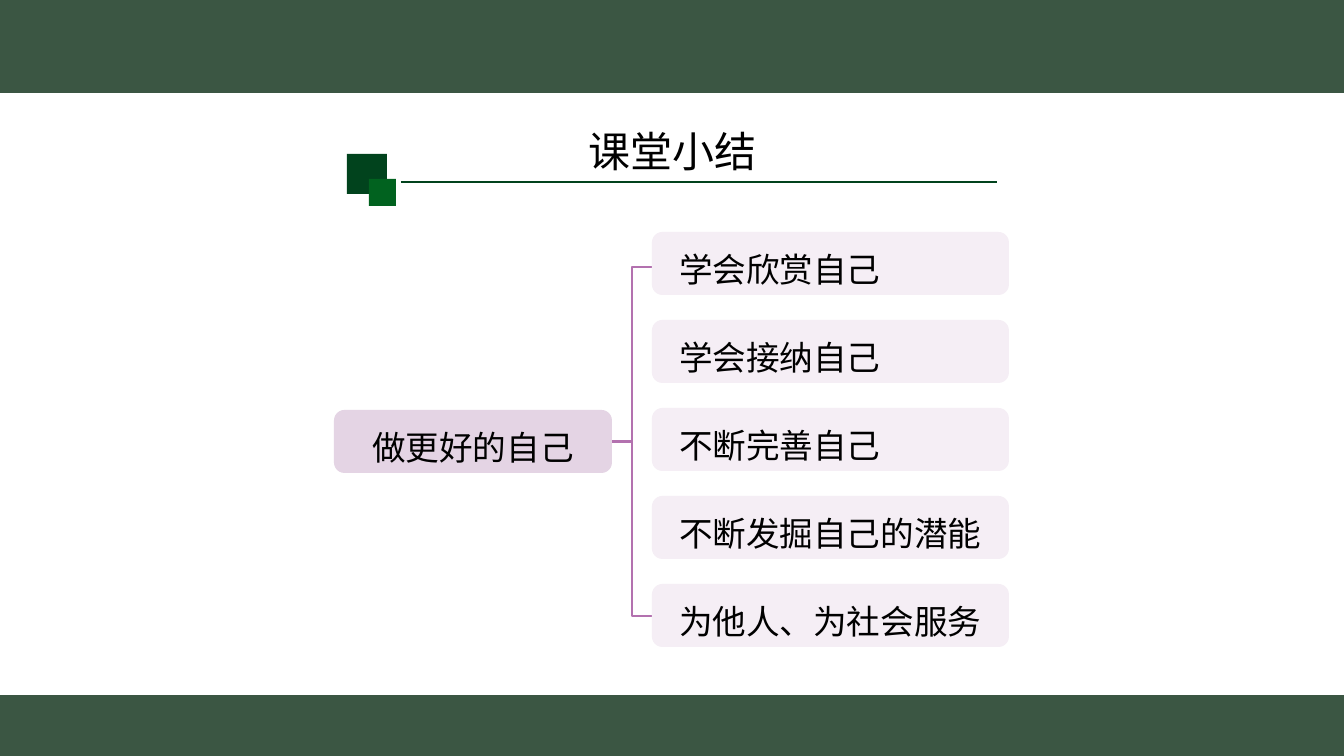
"""Build the lesson summary slide: one theme branching into five points."""
from pptx import Presentation
from pptx.dml.color import RGBColor
from pptx.enum.shapes import MSO_CONNECTOR, MSO_SHAPE
from pptx.enum.text import MSO_ANCHOR, PP_ALIGN
from pptx.oxml.ns import qn
from pptx.util import Pt
from lxml import etree

TITLE = "课堂小结"
ROOT = "做更好的自己"
POINTS = ["学会欣赏自己", "学会接纳自己", "不断完善自己", "不断发掘自己的潜能", "为他人、为社会服务"]

BAND = RGBColor(0x3B, 0x56, 0x43)
DARK = RGBColor(0x01, 0x43, 0x1D)
GREEN = RGBColor(0x01, 0x62, 0x1F)
MAUVE = RGBColor(0xB3, 0x71, 0xAF)
LILAC = RGBColor(0xE4, 0xD4, 0xE4)
PALE = RGBColor(0xF5, 0xEE, 0xF5)
BLACK = RGBColor(0, 0, 0)

SANS, SERIF = "Noto Sans CJK SC", "Times New Roman"
WIDE, HIGH = 1344, 756
BLOCKS = [
    (0, 0, WIDE, 93, BAND),
    (0, 695, WIDE, HIGH - 695, BAND),
    (347, 154, 40, 40, DARK),
    (369, 179, 27, 27, GREEN),
]
LEFT, TOP, WIDTH, HEIGHT, STEP = 652, 232, 357, 63, 88
INSET = 24


def px(*sizes):
    return [round(size * 914400 / 100.8) for size in sizes]


def add_shape(kind, box, fill=None):
    shape = slide.shapes.add_shape(kind, *px(*box))
    shape.shadow.inherit = False
    if fill is None:
        shape.fill.background()
    else:
        shape.fill.solid()
        shape.fill.fore_color.rgb = fill
        shape.line.fill.background()
    return shape


def write(shape, text, size, align, space, font=SANS, inset=0, drop=0):
    frame = shape.text_frame
    frame.text = text
    frame.word_wrap = True
    frame.margin_left, frame.margin_top = px(inset, drop)
    frame.margin_right = frame.margin_bottom = 0
    line = frame.paragraphs[0]
    line.alignment = align
    line.line_spacing = space
    run = line.runs[0]
    run.font.name = font
    run.font.size = Pt(size)
    run.font.color.rgb = BLACK
    east = etree.SubElement(run.font._element, qn("a:ea"))
    east.set("typeface", SANS)


def add_card(box, fill, text, align, font=SANS, inset=0):
    card = add_shape(MSO_SHAPE.ROUNDED_RECTANGLE, box, fill)
    write(card, text, 24, align, 1.2, font, inset, drop=3)
    card.text_frame.vertical_anchor = MSO_ANCHOR.MIDDLE


deck = Presentation()
deck.slide_width, deck.slide_height = px(WIDE, HIGH)
slide = deck.slides.add_slide(deck.slide_layouts[6])

for *box, fill in BLOCKS:
    add_shape(MSO_SHAPE.RECTANGLE, box, fill)

rule = slide.shapes.add_connector(MSO_CONNECTOR.STRAIGHT, *px(401, 182, 997, 182))
rule.line.color.rgb = DARK
rule.line.width = Pt(1)
etree.SubElement(rule._element.spPr, qn("a:effectLst"))

brace = add_shape(MSO_SHAPE.LEFT_BRACE, (612, 267, 40, 349))
brace.adjustments[0] = 0
brace.line.color.rgb = MAUVE
brace.line.width = Pt(1.75)

add_card((334, 410, 278, HEIGHT), LILAC, ROOT, PP_ALIGN.CENTER, SERIF)
for row, point in enumerate(POINTS):
    box = (LEFT, TOP + row * STEP, WIDTH, HEIGHT)
    add_card(box, PALE, point, PP_ALIGN.LEFT, inset=INSET)

title = slide.shapes.add_textbox(*px(220, 126, 905, 63))
write(title, TITLE, 30, PP_ALIGN.CENTER, 0.9, drop=5)

deck.save("out.pptx")
